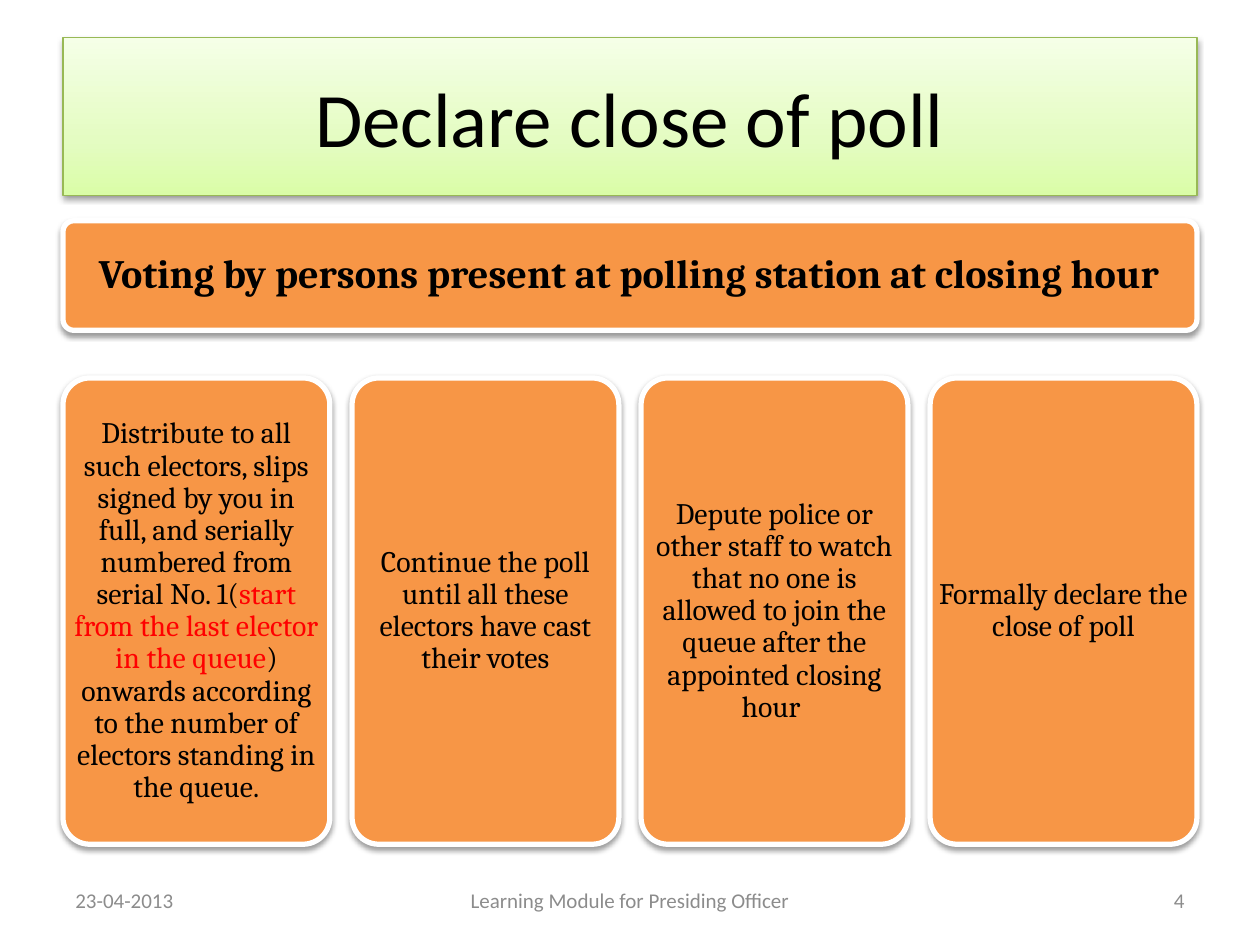
from copy import deepcopy

from lxml import etree
from pptx import Presentation
from pptx.dml.color import RGBColor
from pptx.enum.shapes import MSO_SHAPE
from pptx.enum.text import MSO_ANCHOR, PP_ALIGN
from pptx.oxml import parse_xml
from pptx.oxml.ns import nsdecls, qn
from pptx.util import Cm, Pt

ROUNDED = MSO_SHAPE.ROUNDED_RECTANGLE
MIDDLE = MSO_ANCHOR.MIDDLE
LEFT, CENTER, RIGHT = PP_ALIGN.LEFT, PP_ALIGN.CENTER, PP_ALIGN.RIGHT

BLACK, RED, GREY, WHITE, ORANGE = "000000", "FF0000", "8C8C8C", "FFFFFF", "F79646"
TITLE_STOPS = [(0, "DAFDA7"), (0.35, "E4FCC2"), (1, "F5FFE7")]

TITLE = "Declare close of poll"
HEADING = "Voting by persons present at polling station at closing hour"
STEPS = [
    [
        ("Distribute to all such electors, slips signed by you in full, "
         "and serially numbered from serial No. 1(", BLACK),
        ("start from the last elector in the queue", RED),
        (") onwards according to the number of electors standing in the queue.", BLACK),
    ],
    [("Continue the poll until all these electors have cast their votes", BLACK)],
    [("Depute police or other staff to watch that no one is allowed to join "
      "the queue after the appointed closing hour ", BLACK)],
    [("Formally declare the close of poll", BLACK)],
]
# text, left, width (cm), alignment
FOOTER = [
    ("23-04-2013", 1.27, 5.93, LEFT),
    ("Learning Module for Presiding Officer", 8.68, 8.04, CENTER),
    ("4", 18.2, 5.93, RIGHT),
]

MARGIN, CONTENT_WIDTH = 1.27, 22.86
STEP_WIDTH = 5.38
STEP_PITCH = (CONTENT_WIDTH - STEP_WIDTH) / (len(STEPS) - 1)


def color(hex_code):
    return RGBColor.from_string(hex_code)


def place(shape, left, top, width, height):
    shape.left, shape.top = Cm(left), Cm(top)
    shape.width, shape.height = Cm(width), Cm(height)


def write(shape, runs, size, font, align=CENTER, bold=False, spacing=None):
    frame = shape.text_frame
    frame.word_wrap = True
    frame.vertical_anchor = MIDDLE
    paragraph = frame.paragraphs[0]
    paragraph.alignment = align
    if spacing:
        paragraph.line_spacing = spacing
    for text, hex_code in runs:
        run = paragraph.add_run()
        run.text = text
        run.font.size = Pt(size)
        run.font.name = font
        run.font.bold = bold
        run.font.color.rgb = color(hex_code)


def outline_and_shadow(shape, hex_code, width):
    shape.line.color.rgb = color(hex_code)
    shape.line.width = Pt(width)
    shape.shadow.inherit = False
    effects = shape._element.spPr.find(qn("a:effectLst"))
    shadow = parse_xml(
        f'<a:outerShdw {nsdecls("a")} blurRad="{Pt(3.1)}" dist="{Pt(1.6)}" '
        'dir="5400000" rotWithShape="0"/>')
    black = etree.SubElement(shadow, qn("a:srgbClr"), val=BLACK)
    etree.SubElement(black, qn("a:alpha"), val="38000")
    effects.append(shadow)


def fill_gradient(shape, stops):
    shape.fill.gradient()
    shape.fill.gradient_angle = 90
    stop_list = shape._element.spPr.find(".//" + qn("a:gsLst"))
    while len(stop_list) < len(stops):
        stop_list.append(deepcopy(stop_list[0]))
    for stop, (position, hex_code) in zip(shape.fill.gradient_stops, stops):
        stop.position = position
        stop.color.rgb = color(hex_code)


def add_card(slide, box, runs, size, inset, bold=False):
    card = slide.shapes.add_shape(ROUNDED, *map(Cm, box))
    card.adjustments[0] = 0.1
    card.fill.solid()
    card.fill.fore_color.rgb = color(ORANGE)
    outline_and_shadow(card, WHITE, 3)
    frame = card.text_frame
    frame.margin_left = frame.margin_right = Cm(inset)
    frame.margin_top = frame.margin_bottom = Cm(inset)
    write(card, runs, size, "Cambria", bold=bold, spacing=0.9)


def main():
    presentation = Presentation()
    presentation.slide_width, presentation.slide_height = Cm(25.4), Cm(19.05)
    slide = presentation.slides.add_slide(presentation.slide_layouts[5])

    title = slide.shapes.title
    place(title, MARGIN, 0.76, CONTENT_WIDTH, 3.18)
    fill_gradient(title, TITLE_STOPS)
    outline_and_shadow(title, "98B955", 0.75)
    write(title, [(TITLE, BLACK)], 44, "Calibri")

    add_card(slide, (MARGIN, 4.45, CONTENT_WIDTH, 2.21),
             [(HEADING, BLACK)], 23, 0.19, bold=True)
    for index, runs in enumerate(STEPS):
        left = MARGIN + index * STEP_PITCH
        add_card(slide, (left, 7.62, STEP_WIDTH, 9.4), runs, 17, 0.02)

    for text, left, width, align in FOOTER:
        box = slide.shapes.add_textbox(Cm(left), Cm(17.65), Cm(width), Cm(1.01))
        write(box, [(text, GREY)], 12, "Calibri", align)

    presentation.save("out.pptx")


if __name__ == "__main__":
    main()
